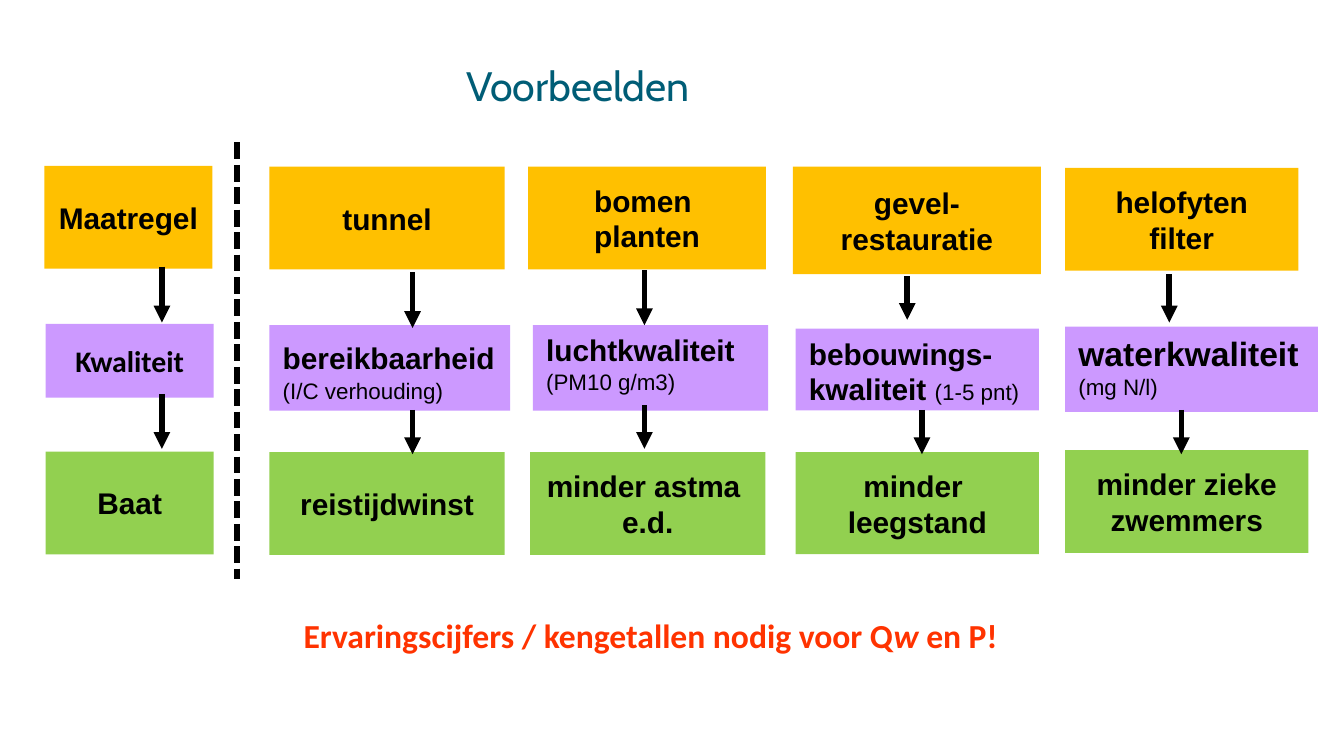
from pptx import Presentation
from pptx.dml.color import RGBColor
from pptx.enum.dml import MSO_LINE
from pptx.enum.shapes import MSO_CONNECTOR, MSO_SHAPE
from pptx.enum.text import MSO_ANCHOR, MSO_AUTO_SIZE, PP_ALIGN
from pptx.oxml.ns import qn
from pptx.util import Pt
from lxml import etree

PX = 4572
RECT, STRAIGHT = MSO_SHAPE.RECTANGLE, MSO_CONNECTOR.STRAIGHT
CENTER, LEFT = PP_ALIGN.CENTER, PP_ALIGN.LEFT
TOP, MIDDLE = MSO_ANCHOR.TOP, MSO_ANCHOR.MIDDLE
SYS_DASH = MSO_LINE.SQUARE_DOT
COLORS = {
    "title": "005D76", "text": "000000", "message": "FF3300",
    "measure": "FFC000", "quality": "CC99FF", "benefit": "92D050",
}
HANGING = 104

MEASURES = [
    ((66, 247, 250, 153), ["Maatregel"]),
    ((401, 248, 350, 153), ["tunnel"]),
    ((786, 248, 354, 153), ["bomen ", "planten"]),
    ((1180, 248, 369, 160), ["gevel-", "restauratie"]),
    ((1585, 250, 347, 153), ["helofyten", "filter"]),
]
QUALITIES = [
    ((401, 484, 358, 127), [[("bereikbaarheid", 16, True), (" ", 20, False)],
                            [("(I/C verhouding)", 12, False)]]),
    ((793, 484, 350, 127), [[("luchtkwaliteit", 16, True)],
                            [("(PM10 g/m3)", 12, False)]]),
    ((1184, 489, 362, 122), [[("bebouwings-", 16, True)],
                             [("kwaliteit ", 16, True), ("(1-5 pnt)", 12, False)]]),
    ((1585, 486, 376, 127), [[("waterkwaliteit", 18, True)],
                             [("(mg N/l)", 12, False)]]),
]
BENEFITS = [
    ((68, 672, 250, 153), ["Baat"]),
    ((401, 673, 350, 153), ["reistijdwinst"]),
    ((789, 673, 350, 153), ["minder astma ", "e.d."]),
    ((1184, 673, 362, 152), ["minder ", "leegstand"]),
    ((1585, 670, 362, 153), ["minder zieke", "zwemmers"]),
]
ARROWS = [
    (241, 397, 480), (241, 586, 668), (614, 405, 488), (614, 610, 676),
    (959, 402, 484), (959, 603, 668), (1350, 411, 476), (1372, 610, 676),
    (1740, 408, 480), (1758, 610, 676),
]


def px(*values):
    """Turn px lengths into EMU."""
    return [v * PX for v in values]


def rgb(name):
    """Look up a named colour."""
    return RGBColor.from_string(COLORS[name])


def style(r, size, bold=True, color="text", font="Arial", italic=False):
    """Format one run."""
    r.font.name, r.font.size = font, Pt(size)
    r.font.bold, r.font.italic = bold, italic
    r.font.color.rgb = rgb(color)


def add_runs(p, runs, **look):
    """Append (text, size, bold) runs to a paragraph."""
    for text, size, bold in runs:
        r = p.add_run()
        r.text = text
        style(r, size, bold, **look)


def add_box(s, box, fill):
    """Draw a filled rectangle without outline and return its text frame."""
    sp = s.shapes.add_shape(RECT, *px(*box))
    sp.shadow.inherit = False
    sp.fill.solid()
    sp.fill.fore_color.rgb = rgb(fill)
    sp.line.fill.background()
    return sp.text_frame


def add_label(s, box, lines, fill, font="Arial"):
    """Draw a box with centred bold lines."""
    tf = add_box(s, box, fill)
    tf.word_wrap, tf.vertical_anchor = False, MIDDLE
    tf.text = "\n".join(lines)
    for p in tf.paragraphs:
        p.alignment = CENTER
        style(p.runs[0], 16, font=font)


def add_quality(s, box, lines):
    """Draw a quality box with its unit in small type."""
    tf = add_box(s, box, "quality")
    tf.word_wrap, tf.vertical_anchor = True, TOP
    for i, runs in enumerate(lines):
        p = tf.add_paragraph() if i else tf.paragraphs[0]
        p.alignment = LEFT
        pPr = p._p.get_or_add_pPr()
        pPr.set("marL", str(HANGING * PX))
        pPr.set("indent", str(-HANGING * PX))
        add_runs(p, runs)


def add_line(s, x, top, bottom, arrow=True):
    """Draw a vertical arrow, or a dashed divider."""
    c = s.shapes.add_connector(STRAIGHT, *px(x, top, x, bottom))
    c.line.color.rgb = rgb("text")
    c.line.width = Pt(3)
    if arrow:
        etree.SubElement(c.line._get_or_add_ln(), qn("a:tailEnd"), type="triangle")
    else:
        c.line.dash_style = SYS_DASH
    etree.SubElement(c._element.spPr, qn("a:effectLst"))


def set_title(s, text):
    """Place and format the title."""
    sp = s.shapes.title
    sp.left, sp.top, sp.width, sp.height = px(694, 102, 530, 58)
    tf = sp.text_frame
    tf.text = text
    tf.margin_left = tf.margin_right = tf.margin_top = tf.margin_bottom = 0
    tf.vertical_anchor = TOP
    p = tf.paragraphs[0]
    p.alignment, p.line_spacing = LEFT, Pt(22)
    style(p.runs[0], 22, False, "title", "Cabin")


def add_message(s):
    """Write the closing message."""
    tf = s.shapes.add_textbox(*px(432, 905, 1082, 80)).text_frame
    tf.word_wrap, tf.auto_size = False, MSO_AUTO_SIZE.SHAPE_TO_FIT_TEXT
    p = tf.paragraphs[0]
    for text, italic in [("Ervaringscijfers / kengetallen nodig voor Q", False),
                         ("w ", True), ("en P!", False)]:
        add_runs(p, [(text, 18, True)], color="message", font="Calibri", italic=italic)


def main():
    """Build the slide."""
    prs = Presentation()
    prs.slide_width, prs.slide_height = px(2000, 1125)
    s = prs.slides.add_slide(prs.slide_layouts[5])
    set_title(s, "Voorbeelden")
    for fill, labels in (("measure", MEASURES), ("benefit", BENEFITS)):
        for box, lines in labels:
            add_label(s, box, lines, fill)
    add_label(s, (68, 482, 250, 110), ["Kwaliteit"], "quality", "Calibri")
    for box, lines in QUALITIES:
        add_quality(s, box, lines)
    add_message(s)
    add_line(s, 353, 212, 862, arrow=False)
    for arrow in ARROWS:
        add_line(s, *arrow)
    prs.save("out.pptx")


if __name__ == "__main__":
    main()
